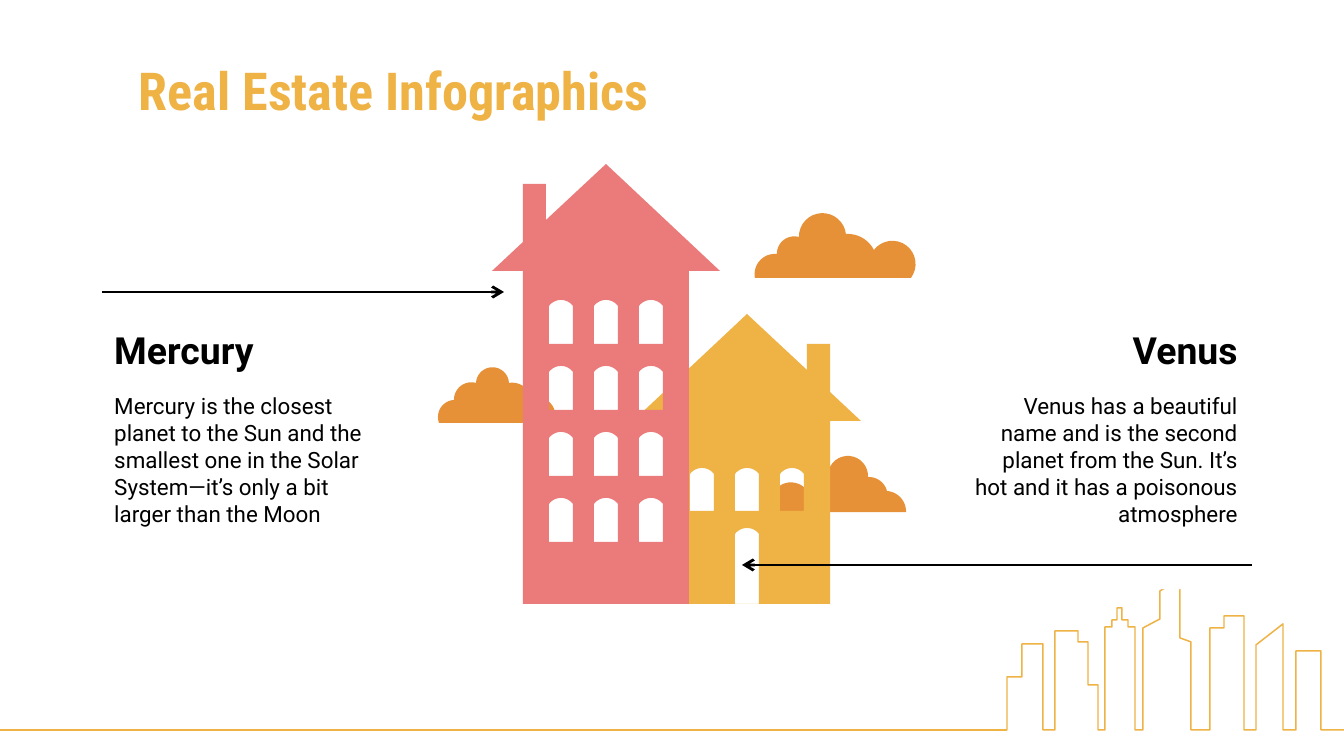
"""Build a real estate slide with two houses, clouds and a skyline."""
from math import atan, cos, hypot, sin

from lxml.etree import SubElement
from pptx import Presentation
from pptx.dml.color import RGBColor
from pptx.enum.shapes import MSO_CONNECTOR as Conn
from pptx.enum.text import MSO_ANCHOR as Anchor, MSO_AUTO_SIZE as Auto, PP_ALIGN as Align
from pptx.oxml.ns import qn
from pptx.util import Pt

SCALE = 914400 / 134.4
GOLD, ROSE, RUST, WHITE, BLACK = "EEB245", "EB7B7B", "E69138", "FFFFFF", "000000"
TITLE = "Real Estate Infographics"
TOPICS = [
    ("Mercury", "Mercury is the closest planet to the Sun and the smallest one in the "
     "Solar System—it’s only a bit larger than the Moon", 101, Align.LEFT),
    ("Venus", "Venus has a beautiful name and is the second planet from the Sun. "
     "It’s hot and it has a poisonous atmosphere", 954, Align.RIGHT),
]
ARROWS = [((102, 292), (504, 292)), ((1252, 565), (742, 565))]
SKYLINE = [
    (973, 730), (1007, 730), (1007, 677), (1022, 677), (1022, 644), (1043, 644),
    (1043, 730), (1055, 730), (1055, 631), (1078, 631), (1078, 642), (1088, 642),
    (1088, 685), (1098, 685), (1098, 730), (1105, 730), (1105, 627), (1112, 627),
    (1112, 620), (1117, 620), (1117, 608), (1122, 608), (1122, 620), (1128, 620),
    (1128, 627), (1135, 627), (1135, 730), (1143, 730), (1143, 628), (1160, 619),
    (1160, 591), (1180, 579), (1180, 638), (1191, 642), (1191, 730), (1210, 730),
    (1210, 628), (1224, 628), (1224, 616), (1244, 616), (1244, 730), (1256, 730),
    (1256, 645), (1283, 624), (1283, 730), (1296, 730), (1296, 651), (1321, 651),
    (1321, 730), (1344, 730),
]
CLOUDS = [
    (RUST, (439, 423), [(454, 400, .5), (476, 383, .5), (509, 383, .95),
                        (532, 399, .4), (553, 423, .7)]),
    (WHITE, (1035, 589), [(1048, 562, .25), (1077, 513, .8), (1156, 505, .97),
                          (1210, 531, .45), (1257, 589, .6)]),
    (RUST, (773, 512), [(805, 488, .85), (828, 473, .3), (868, 477, .95),
                        (887, 491, .35), (906, 512, .4)]),
    (RUST, (755, 278), [(777, 254, .5), (799, 237, .5), (846, 234, .95),
                        (874, 250, .3), (911, 278, 1)]),
]
PANES = [(549 + 45 * col, 306 + 66 * row, 38) for row in range(4) for col in range(3)]
DOORS = [(690 + 45 * col, 474, 37) for col in range(3)] + [(735, 534, 70)]
HOUSES = [(GOLD, 747, 314, 1, 30, DOORS), (ROSE, 606, 164, -1, 20, PANES)]
BASE = 604


def px(num):
    return round(num * SCALE)


def rgb(code):
    return RGBColor.from_string(code)


def arc(start, end, bulge, steps=16):
    (x, y), (u, v) = start, end
    span = hypot(u - x, v - y)
    dx, dy = (u - x) / span, (v - y) / span
    rad = span * (1 + bulge ** 2) / (4 * bulge)
    drop = bulge * span / 2 - rad
    mx, my = (x + u) / 2 + dy * drop, (y + v) / 2 - dx * drop
    half = 2 * atan(bulge)
    turns = [half * (2 * i / steps - 1) for i in range(steps + 1)]
    return [(mx + rad * (dy * cos(t) + dx * sin(t)),
             my + rad * (dy * sin(t) - dx * cos(t))) for t in turns]


def draw(rings, fill=None, line=None):
    pen = None
    for ring in rings:
        pts = [(px(x), px(y)) for x, y in ring]
        if pen:
            pen.move_to(*pts[0])
        else:
            pen = shapes.build_freeform(*pts[0], scale=1)
        pen.add_line_segments(pts[1:], close=bool(fill))
    shape = pen.convert_to_shape()
    shape.shadow.inherit = False
    if fill:
        shape.fill.solid()
        shape.fill.fore_color.rgb = rgb(fill)
        shape.line.fill.background()
    else:
        shape.fill.background()
        shape.line.color.rgb = rgb(line)
        shape.line.width = Pt(0.8)


def cloud(fill, start, bumps):
    ring = [start]
    for x, y, bulge in bumps:
        ring += arc(ring[-1], (x, y), bulge)
    draw([ring], fill)


def house(fill, x, y, side, top, holes):
    eave = y + 107
    ring = [(-114, eave), (-83, eave), (-83, BASE), (83, BASE), (83, eave),
            (114, eave), (83, y + 78), (83, y + top), (60, y + top), (60, y + 56), (0, y)]
    rings = [[(x + side * dx, b) for dx, b in ring]]
    for left, rise, tall in holes:
        foot = [(left + 24, rise + tall), (left, rise + tall)]
        rings.append(arc((left, rise), (left + 24, rise), .5) + foot)
    draw(rings, fill)


def rule(start, end, color, width, head=False):
    line = shapes.add_connector(Conn.STRAIGHT, *map(px, start + end))
    line.line.color.rgb = rgb(color)
    line.line.width = Pt(width)
    if head:
        SubElement(line.line._get_or_add_ln(), qn("a:tailEnd"), type="arrow")
    SubElement(line._element.spPr, qn("a:effectLst"))


def write(box, spot, text, size, font, color, align, bold=True, anchor=Anchor.MIDDLE):
    box.left, box.top, box.width, box.height = map(px, spot)
    frame = box.text_frame
    frame.text = text
    frame.word_wrap, frame.auto_size = True, Auto.NONE
    frame.vertical_anchor = anchor
    frame.margin_left = frame.margin_right = px(13.44)
    frame.margin_top = frame.margin_bottom = px(13.44)
    para = frame.paragraphs[0]
    para.alignment = align
    para.font.size, para.font.name, para.font.bold = Pt(size), font, bold
    para.font.color.rgb = rgb(color)


deck = Presentation()
deck.slide_width, deck.slide_height = px(1344), px(756)
slide = deck.slides.add_slide(deck.slide_layouts[5])
shapes = slide.shapes

draw([SKYLINE], line=GOLD)
rule((1007, 730), (0, 730), GOLD, 0.75)
write(shapes.title, (67, 54, 653, 71), TITLE, 28, "Roboto Condensed", GOLD, Align.CENTER)
for item in CLOUDS:
    cloud(*item)
for item in HOUSES:
    house(*item)
for name, note, left, align in TOPICS:
    write(shapes.add_textbox(0, 0, 0, 0), (left, 316, 297, 67), name, 20, "Roboto",
          BLACK, align)
    write(shapes.add_textbox(0, 0, 0, 0), (left, 379, 297, 156), note, 12, "Roboto",
          BLACK, align, False, Anchor.TOP)
for start, end in ARROWS:
    rule(start, end, BLACK, 1.5, True)
deck.save("out.pptx")
